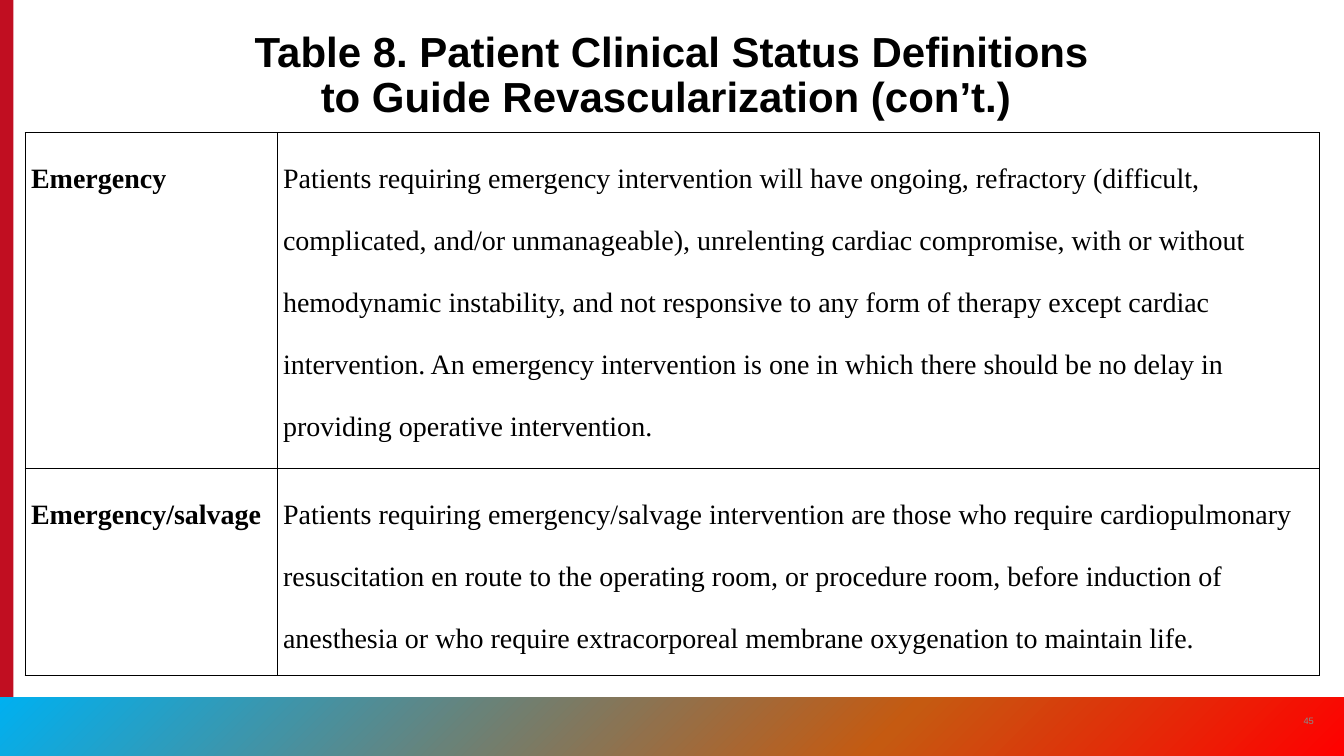
from lxml.etree import SubElement
from pptx import Presentation
from pptx.dml.color import RGBColor
from pptx.enum.shapes import MSO_SHAPE as Shape
from pptx.enum.text import MSO_ANCHOR as Anchor, MSO_AUTO_SIZE as AutoSize, PP_ALIGN as Align
from pptx.oxml.ns import qn
from pptx.util import Inches, Pt

TITLE = "Table 8. Patient Clinical Status Definitions to Guide Revascularization (con’t.) "
DEFINITIONS = [
    ("Emergency",
     "Patients requiring emergency intervention will have ongoing, refractory (difficult, "
     "complicated, and/or unmanageable), unrelenting cardiac compromise, with or without "
     "hemodynamic instability, and not responsive to any form of therapy except cardiac "
     "intervention. An emergency intervention is one in which there should be no delay in "
     "providing operative intervention."),
    ("Emergency/salvage",
     "Patients requiring emergency/salvage intervention are those who require cardiopulmonary "
     "resuscitation en route to the operating room, or procedure room, before induction of "
     "anesthesia or who require extracorporeal membrane oxygenation to maintain life."),
]
COLUMN_WIDTHS = [3, 12.41]
ROW_HEIGHTS = [3.74, 2.46]
FOOTER_STOPS = [(0, "00B0F0"), (66, "C55A11"), (100, "FF0000")]

TITLE_FONT = {"name": "Arial", "size": Pt(36), "bold": True}
NUMBER_FONT = {"name": "Arial", "size": Pt(8)}
TERM_FONT = {"name": "Times New Roman", "size": Pt(24), "bold": True}
DEFINITION_FONT = {**TERM_FONT, "bold": False}


def color(value):
    """Return the RGB colour for a hex string."""
    return RGBColor.from_string(value)


def apply(target, values):
    """Set every attribute of a format dict on the target."""
    for name, value in values.items():
        setattr(target, name, value)


def write(frame, text, font, font_color, paragraph_format):
    """Write one formatted paragraph into a text frame."""
    paragraph = frame.paragraphs[0]
    apply(paragraph, paragraph_format)
    run = paragraph.add_run()
    run.text = text
    apply(run.font, font)
    run.font.color.rgb = color(font_color)


def add_bar(slide, box):
    """Add a plain rectangle without line or shadow."""
    shape = slide.shapes.add_shape(Shape.RECTANGLE, *map(Inches, box))
    shape.shadow.inherit = False
    shape.line.fill.background()
    return shape


def add_side_bar(slide, box):
    """Add the red bar along the left edge."""
    fill = add_bar(slide, box).fill
    fill.solid()
    fill.fore_color.rgb = color("C10E21")


def add_footer(slide, box, number):
    """Add the gradient footer with the slide number at its right end."""
    left, top, width, height = box
    shape = add_bar(slide, box)
    shape.fill.gradient()
    shape.fill.gradient_angle = 315
    stops = shape._element.spPr.find(".//" + qn("a:gsLst"))
    stops.clear()
    for position, value in FOOTER_STOPS:
        stop = SubElement(stops, qn("a:gs"), pos=str(position * 1000))
        SubElement(stop, qn("a:srgbClr"), val=value)
    number_box = (left + width - 0.66, top + 0.04, 0.48, 0.48)
    frame = slide.shapes.add_textbox(*map(Inches, number_box)).text_frame
    apply(frame, {"word_wrap": True, "vertical_anchor": Anchor.MIDDLE})
    write(frame, number, NUMBER_FONT, "8A8B8A", {"alignment": Align.CENTER})


def add_title(slide, box):
    """Place and fill the title placeholder."""
    title = slide.shapes.title
    apply(title, dict(zip(("left", "top", "width", "height"), map(Inches, box))))
    frame = title.text_frame
    apply(frame, {"word_wrap": True, "auto_size": AutoSize.NONE, "vertical_anchor": Anchor.BOTTOM})
    write(frame, TITLE, TITLE_FONT, "000000", {"alignment": Align.CENTER, "line_spacing": 0.9})


def add_borders(cell, value, width):
    """Draw all four borders of a table cell."""
    properties = cell._tc.get_or_add_tcPr()
    for side in ("lnL", "lnR", "lnT", "lnB"):
        line = SubElement(properties, qn("a:" + side), w=str(Pt(width)))
        fill = SubElement(line, qn("a:solidFill"))
        SubElement(fill, qn("a:srgbClr"), val=value)


def add_definitions(slide, box):
    """Add the table of clinical status terms and their definitions."""
    size = len(DEFINITIONS), len(COLUMN_WIDTHS)
    table = slide.shapes.add_table(*size, *map(Inches, box)).table
    apply(table, {"first_row": False, "horz_banding": False})
    for column, width in zip(table.columns, COLUMN_WIDTHS):
        column.width = Inches(width)
    margins = {"margin_left": Inches(0.07), "margin_right": Inches(0.07),
               "margin_top": 0, "margin_bottom": 0}
    for row, height, texts in zip(table.rows, ROW_HEIGHTS, DEFINITIONS):
        row.height = Inches(height)
        for cell, text, font in zip(row.cells, texts, (TERM_FONT, DEFINITION_FONT)):
            apply(cell, margins)
            add_borders(cell, "000000", 1)
            cell.fill.background()
            write(cell.text_frame, text, font, "000000", {"line_spacing": 2.0})


def main():
    """Build the slide and save it."""
    presentation = Presentation()
    apply(presentation, {"slide_width": Inches(16), "slide_height": Inches(9)})
    slide = presentation.slides.add_slide(presentation.slide_layouts[5])
    add_side_bar(slide, (0, 0, 0.16, 9))
    add_footer(slide, (0, 8.3, 16, 0.7), "45")
    add_title(slide, (2.79, 0.33, 10.42, 1.17))
    add_definitions(slide, (0.3, 1.58, sum(COLUMN_WIDTHS), sum(ROW_HEIGHTS)))
    presentation.save("out.pptx")


if __name__ == "__main__":
    main()
